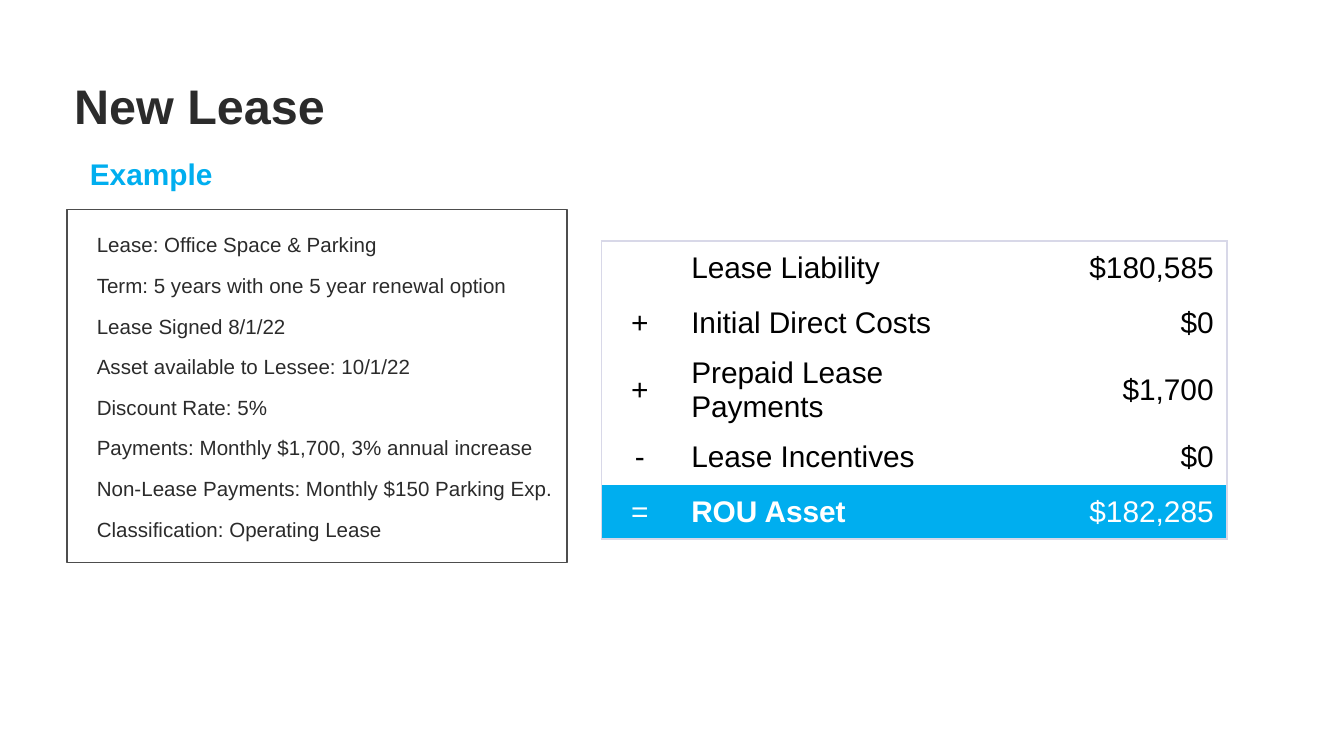
"""Build the New Lease example slide with its terms and asset table."""
import dataclasses
import typing

import lxml.etree
import pptx
import pptx.dml.color
import pptx.enum.shapes
import pptx.enum.text
import pptx.oxml.ns
import pptx.util

Cm = pptx.util.Cm
Pt = pptx.util.Pt
qn = pptx.oxml.ns.qn
Align = pptx.enum.text.PP_ALIGN
Anchor = pptx.enum.text.MSO_ANCHOR

INK, BLUE, EDGE, FRAME = "2B2B2B", "00AEEF", "D8D8E8", "4D4D4D"
BLACK, WHITE = "000000", "FFFFFF"


@dataclasses.dataclass
class Style:
    size: float
    color: str
    bold: bool = False
    space: float = 1.0
    left: float = 0
    first: float = 0
    align: typing.Any = Align.LEFT


@dataclasses.dataclass
class Row:
    sign: str
    label: str
    value: str
    total: bool = False


TERMS = [
    "Lease: Office Space & Parking",
    "Term: 5 years with one 5 year renewal option",
    "Lease Signed 8/1/22",
    "Asset available to Lessee: 10/1/22",
    "Discount Rate: 5%",
    "Payments: Monthly $1,700, 3% annual increase",
    "Non-Lease Payments: Monthly $150 Parking Exp.",
    "Classification: Operating Lease",
]
ROWS = [
    Row("", "Lease Liability", "$180,585"),
    Row("+", "Initial Direct Costs", "$0"),
    Row("+", "Prepaid Lease Payments", "$1,700"),
    Row("-", "Lease Incentives", "$0"),
    Row("=", "ROU Asset", "$182,285", True),
]
WIDTHS = [1.44, 5.19, 5.19]
ALIGNS = [Align.CENTER, Align.LEFT, Align.RIGHT]


def rgb(code: str) -> pptx.dml.color.RGBColor:
    return pptx.dml.color.RGBColor.from_string(code)


def place(shape, left: float, top: float, width: float, height: float) -> None:
    shape.left, shape.top = Cm(left), Cm(top)
    shape.width, shape.height = Cm(width), Cm(height)


def write(frame, lines: list[str], style: Style) -> None:
    for i, line in enumerate(lines):
        para = frame.paragraphs[0] if i == 0 else frame.add_paragraph()
        para.text = line
        para.alignment = style.align
        para.line_spacing = style.space
        para.space_before = Pt(0)
        if style.left:
            props = para._p.get_or_add_pPr()
            props.set("marL", str(Cm(style.left)))
            props.set("indent", str(Cm(style.first)))
        font = para.font
        font.name, font.size, font.bold = "Arial", Pt(style.size), style.bold
        font.color.rgb = rgb(style.color)


def fill_box(shape, lines: list[str], style: Style) -> None:
    frame = shape.text_frame
    frame.word_wrap = True
    frame.auto_size = pptx.enum.text.MSO_AUTO_SIZE.NONE
    frame.vertical_anchor = Anchor.TOP
    frame.margin_left = frame.margin_right = Cm(0.13)
    frame.margin_top = frame.margin_bottom = Cm(0.13)
    write(frame, lines, style)


def border(cell, sides: dict[str, bool]) -> None:
    props = cell._tc.get_or_add_tcPr()
    for side, shown in sides.items():
        line = lxml.etree.SubElement(props, qn(f"a:ln{side}"), w=str(Pt(1)))
        if shown:
            paint = lxml.etree.SubElement(line, qn("a:solidFill"))
            lxml.etree.SubElement(paint, qn("a:srgbClr"), val=EDGE)
        else:
            lxml.etree.SubElement(line, qn("a:noFill"))


def add_grid(slide) -> None:
    last, end = len(ROWS) - 1, len(WIDTHS) - 1
    table = slide.shapes.add_table(
        len(ROWS), len(WIDTHS), Cm(11.37), Cm(4.56),
        Cm(sum(WIDTHS)), Cm(1.03 * len(ROWS))).table
    table.first_row = table.horz_banding = False
    for column, width in zip(table.columns, WIDTHS):
        column.width = Cm(width)
    for r, row in enumerate(ROWS):
        table.rows[r].height = Cm(1.03)
        for c, text in enumerate((row.sign, row.label, row.value)):
            cell = table.cell(r, c)
            border(cell, {"L": c == 0, "R": c == end,
                          "T": r == 0, "B": r == last})
            cell.vertical_anchor = Anchor.MIDDLE
            if row.total:
                cell.fill.solid()
                cell.fill.fore_color.rgb = rgb(BLUE)
            else:
                cell.fill.background()
            color = WHITE if row.total else BLACK
            write(cell.text_frame, [text],
                  Style(16, color, row.total and c == 1, align=ALIGNS[c]))


def main() -> None:
    deck = pptx.Presentation()
    deck.slide_width, deck.slide_height = Cm(25.4), Cm(14.29)
    slide = deck.slides.add_slide(deck.slide_layouts[5])

    title = slide.shapes.title
    place(title, 1.27, 1.14, 17.15, 1.4)
    fill_box(title, ["New Lease"], Style(26, INK, True, 1.15))

    head = slide.shapes.add_textbox(Cm(1.27), Cm(2.54), Cm(17.15), Cm(0.86))
    fill_box(head, ["Example"], Style(16, BLUE, True, 1.4, 1.27, -0.97))

    add_grid(slide)

    terms = slide.shapes.add_shape(
        pptx.enum.shapes.MSO_SHAPE.RECTANGLE,
        Cm(1.27), Cm(3.96), Cm(9.45), Cm(6.68))
    terms.shadow.inherit = False
    terms.fill.background()
    terms.line.color.rgb = rgb(FRAME)
    terms.line.width = Pt(0.75)
    fill_box(terms, TERMS, Style(11, INK, False, 1.65, 0.43))

    deck.save("out.pptx")


if __name__ == "__main__":
    main()
